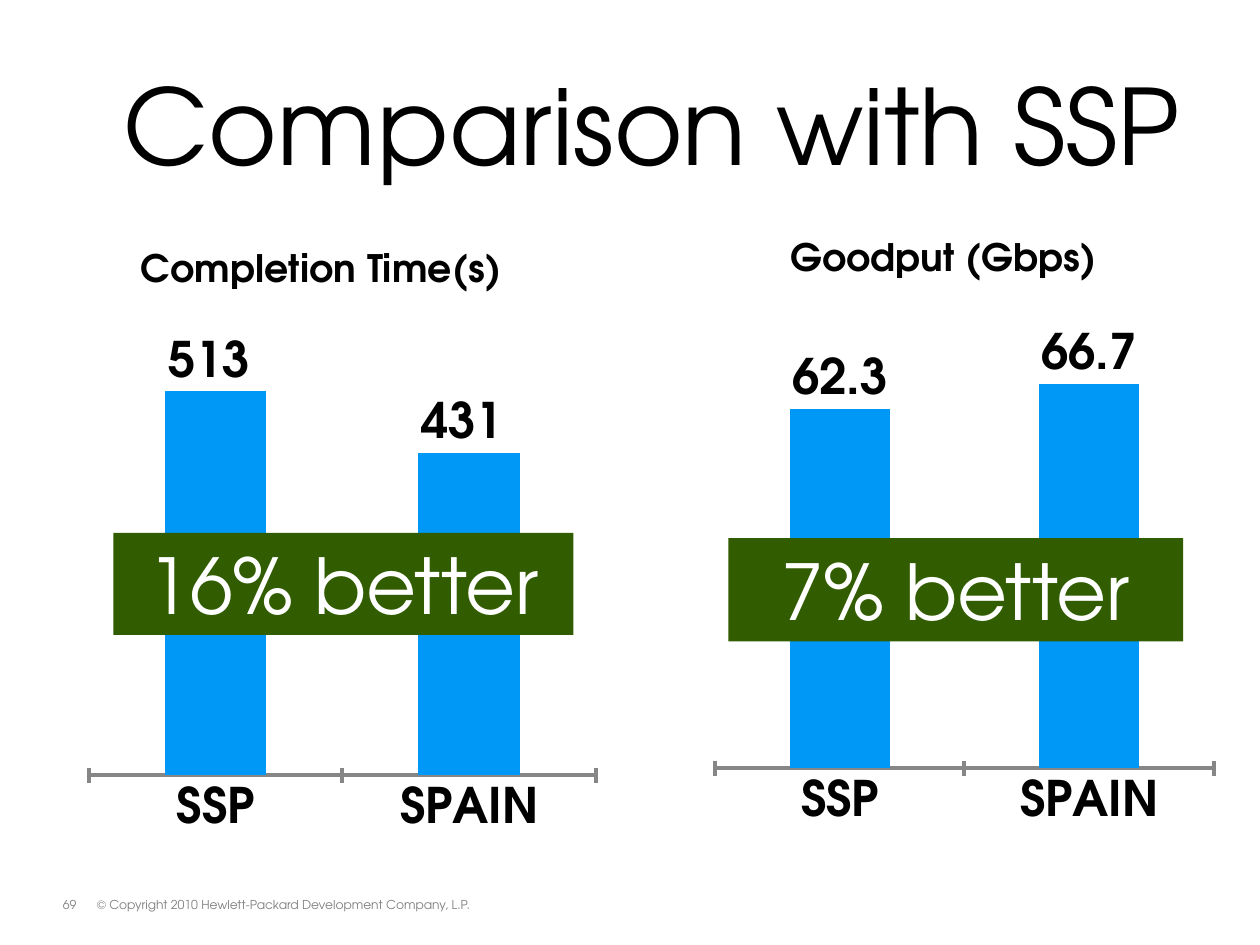
from dataclasses import dataclass

from lxml.etree import SubElement
from pptx import Presentation
from pptx.chart.data import CategoryChartData
from pptx.dml.color import RGBColor
from pptx.enum.chart import XL_CHART_TYPE, XL_LABEL_POSITION, XL_TICK_MARK
from pptx.enum.shapes import MSO_SHAPE
from pptx.enum.text import MSO_ANCHOR, PP_ALIGN
from pptx.oxml.ns import qn
from pptx.util import Inches, Pt

FONT = "TeX Gyre Adventor"
COLORS = {
    "text": "000000",
    "footer": "808080",
    "axis": "868686",
    "bar": "0098F6",
    "banner": "325C00",
    "banner_text": "FFFFFF",
}
CATEGORIES = ("SSP", "SPAIN")
PLOT_AREA = {"x": 0.139, "y": 0.1, "w": 0.788, "h": 0.751}


@dataclass
class Box:
    left: float
    top: float
    width: float
    height: float

    def lengths(self):
        return [Inches(n) for n in (self.left, self.top, self.width, self.height)]


@dataclass
class Comparison:
    title: str
    values: tuple
    number_format: str
    maximum: float
    chart_box: Box
    banner: str
    banner_box: Box


@dataclass
class Label:
    text: str
    box: Box
    size: float
    color: str


LABELS = [
    Label("© Copyright 2010 Hewlett-Packard Development Company, L.P.",
          Box(0.67, 7.07, 4.31, 0.22), 7, "footer"),
    Label("69", Box(0.4, 7.07, 0.42, 0.22), 7, "footer"),
    Label("Comparison with SSP", Box(0.88, 0.43, 8.62, 2.6), 60, "text"),
]
COMPARISONS = [
    Comparison("Goodput (Gbps)", (62.3, 66.7), "0.0", 85,
               Box(4.98, 1.69, 5.02, 5.18), "7% better", Box(5.78, 4.27, 3.61, 0.82)),
    Comparison("Completion Time(s)", (513, 431), '0" "', 650,
               Box(0, 1.78, 5.1, 5.14), "16% better", Box(0.9, 4.23, 3.65, 0.81)),
]


def rgb(name: str) -> RGBColor:
    return RGBColor.from_string(COLORS[name])


def format_font(font, size: float, color: str = "text", bold: bool = False) -> None:
    for attribute, value in {"name": FONT, "size": Pt(size), "bold": bold}.items():
        setattr(font, attribute, value)
    font.color.rgb = rgb(color)


def add_label(slide, label: Label) -> None:
    frame = slide.shapes.add_textbox(*label.box.lengths()).text_frame
    frame.word_wrap = True
    paragraph = frame.paragraphs[0]
    run = paragraph.add_run()
    run.text = label.text
    format_font(run.font, label.size, label.color)


def add_banner(slide, text: str, box: Box) -> None:
    shape = slide.shapes.add_shape(MSO_SHAPE.RECTANGLE, *box.lengths())
    shape.shadow.inherit = False
    shape.fill.solid()
    shape.fill.fore_color.rgb = rgb("banner")
    shape.line.fill.background()
    shape.text_frame.vertical_anchor = MSO_ANCHOR.MIDDLE
    paragraph = shape.text_frame.paragraphs[0]
    paragraph.alignment = PP_ALIGN.CENTER
    run = paragraph.add_run()
    run.text = text
    format_font(run.font, 44, "banner_text")


def set_plot_area(chart) -> None:
    """Fix the inner plot area as fractions of the chart."""
    plot_area = chart.plots[0]._element.getparent()
    layout = plot_area.find(qn("c:layout"))
    if layout is None:
        layout = SubElement(plot_area, qn("c:layout"))
        plot_area.insert(0, layout)
    manual = SubElement(layout, qn("c:manualLayout"))
    settings = {"layoutTarget": "inner", "xMode": "edge", "yMode": "edge", **PLOT_AREA}
    for tag, value in settings.items():
        SubElement(manual, qn(f"c:{tag}")).set("val", str(value))


def add_comparison_chart(slide, comparison: Comparison) -> None:
    data = CategoryChartData()
    data.categories = CATEGORIES
    data.add_series(comparison.title, comparison.values)
    chart = slide.shapes.add_chart(
        XL_CHART_TYPE.COLUMN_CLUSTERED, *comparison.chart_box.lengths(), data).chart
    chart.has_legend = False
    format_font(chart.font, 18)
    set_plot_area(chart)

    # Title
    chart.has_title = True
    run = chart.chart_title.text_frame.paragraphs[0].add_run()
    run.text = comparison.title
    format_font(run.font, 21.6, bold=True)

    # Axes
    category_axis, value_axis = chart.category_axis, chart.value_axis
    category_axis.major_tick_mark = XL_TICK_MARK.CROSS
    category_axis.format.line.color.rgb = rgb("axis")
    category_axis.format.line.width = Pt(2.25)
    format_font(category_axis.tick_labels.font, 28, bold=True)
    value_settings = {"minimum_scale": 0, "maximum_scale": comparison.maximum,
                      "has_major_gridlines": False, "visible": False}
    for attribute, value in value_settings.items():
        setattr(value_axis, attribute, value)

    # Bars and their values
    plot = chart.plots[0]
    plot.vary_by_categories = False
    plot.gap_width = 150
    series = plot.series[0]
    series.format.fill.solid()
    series.format.fill.fore_color.rgb = rgb("bar")
    labels = series.data_labels
    label_settings = {"show_value": True, "number_format": comparison.number_format,
                      "number_format_is_linked": False,
                      "position": XL_LABEL_POSITION.OUTSIDE_END}
    for attribute, value in label_settings.items():
        setattr(labels, attribute, value)
    format_font(labels.font, 28, bold=True)


def main() -> None:
    presentation = Presentation()
    presentation.slide_width = Inches(10)
    presentation.slide_height = Inches(7.5)
    slide = presentation.slides.add_slide(presentation.slide_layouts[6])

    # Footer and title
    for label in LABELS:
        add_label(slide, label)

    # Charts, with the banners in front
    for comparison in COMPARISONS:
        add_comparison_chart(slide, comparison)
    for comparison in reversed(COMPARISONS):
        add_banner(slide, comparison.banner, comparison.banner_box)

    presentation.save("out.pptx")


if __name__ == "__main__":
    main()
